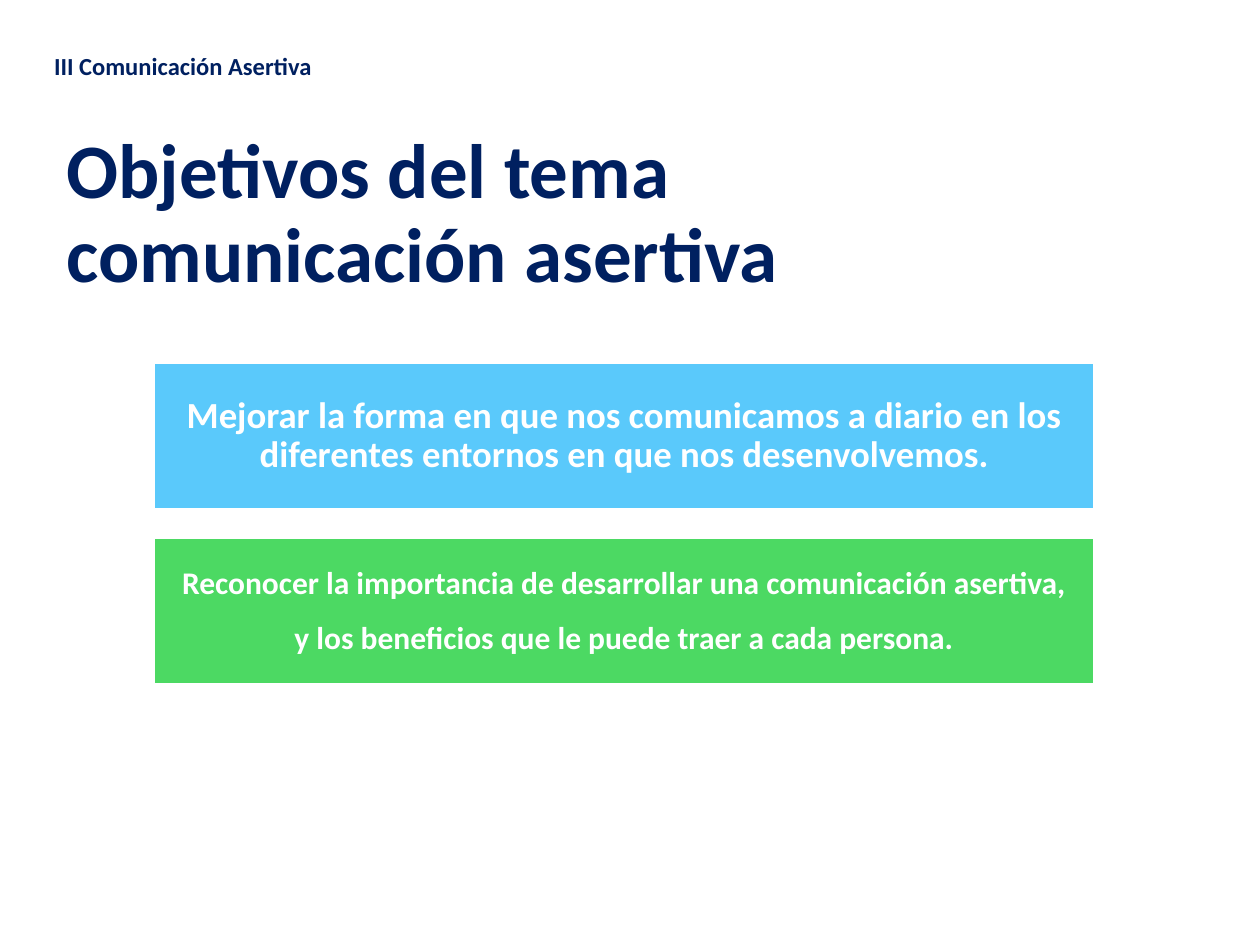
"""Build the slide with the objectives of the assertive communication topic."""
from pptx import Presentation
from pptx.dml.color import RGBColor
from pptx.enum.shapes import MSO_SHAPE
from pptx.enum.text import MSO_ANCHOR, PP_ALIGN
from pptx.util import Cm, Pt

COLOURS = {"navy": "002060", "sky": "5AC9FB", "green": "4CD963", "white": "FFFFFF"}


def colour(name):
    return RGBColor.from_string(COLOURS[name])


def write(box, lines, size, ink, align=PP_ALIGN.LEFT, spacing=0.9, gap=0):
    frame = box.text_frame
    frame.word_wrap = True
    frame.vertical_anchor = MSO_ANCHOR.MIDDLE
    for index, line in enumerate(lines):
        para = frame.add_paragraph() if index else frame.paragraphs[0]
        para.alignment = align
        para.line_spacing = spacing
        if index:
            para.space_before = Pt(gap)
        span = para.add_run()
        span.text = line
        span.font.name = "Calibri"
        span.font.size = Pt(size)
        span.font.bold = True
        span.font.color.rgb = colour(ink)


deck = Presentation()
deck.slide_width = Cm(25.4)
deck.slide_height = Cm(19.05)
page = deck.slides.add_slide(deck.slide_layouts[6])

title = page.shapes.add_textbox(Cm(1.09), Cm(2.44), Cm(21.59), Cm(3.81))
write(title, ["Objetivos del tema comunicación asertiva"], 44, "navy")

objectives = [
    ("sky", 21, ["Mejorar la forma en que nos comunicamos a diario en los "
                 "diferentes entornos en que nos desenvolvemos."]),
    ("green", 18, ["Reconocer la importancia de desarrollar una comunicación asertiva,",
                   "y los beneficios que le puede traer a cada persona."]),
]
for row, (fill, size, lines) in enumerate(objectives):
    box = page.shapes.add_shape(
        MSO_SHAPE.RECTANGLE, Cm(3.1), Cm(7.32 + 3.53 * row), Cm(18.97), Cm(2.95))
    box.shadow.inherit = False
    box.fill.solid()
    box.fill.fore_color.rgb = colour(fill)
    box.line.color.rgb = colour("white")
    box.line.width = Pt(1.5)
    frame = box.text_frame
    frame.margin_left = frame.margin_right = Cm(0.18)
    frame.margin_top = frame.margin_bottom = Cm(0.1)
    write(box, lines, size, "white", PP_ALIGN.CENTER, gap=12)

section = page.shapes.add_textbox(Cm(0.84), Cm(0.89), Cm(12.55), Cm(0.86))
write(section, ["III Comunicación Asertiva"], 14, "navy", spacing=1.0)

deck.save("out.pptx")
